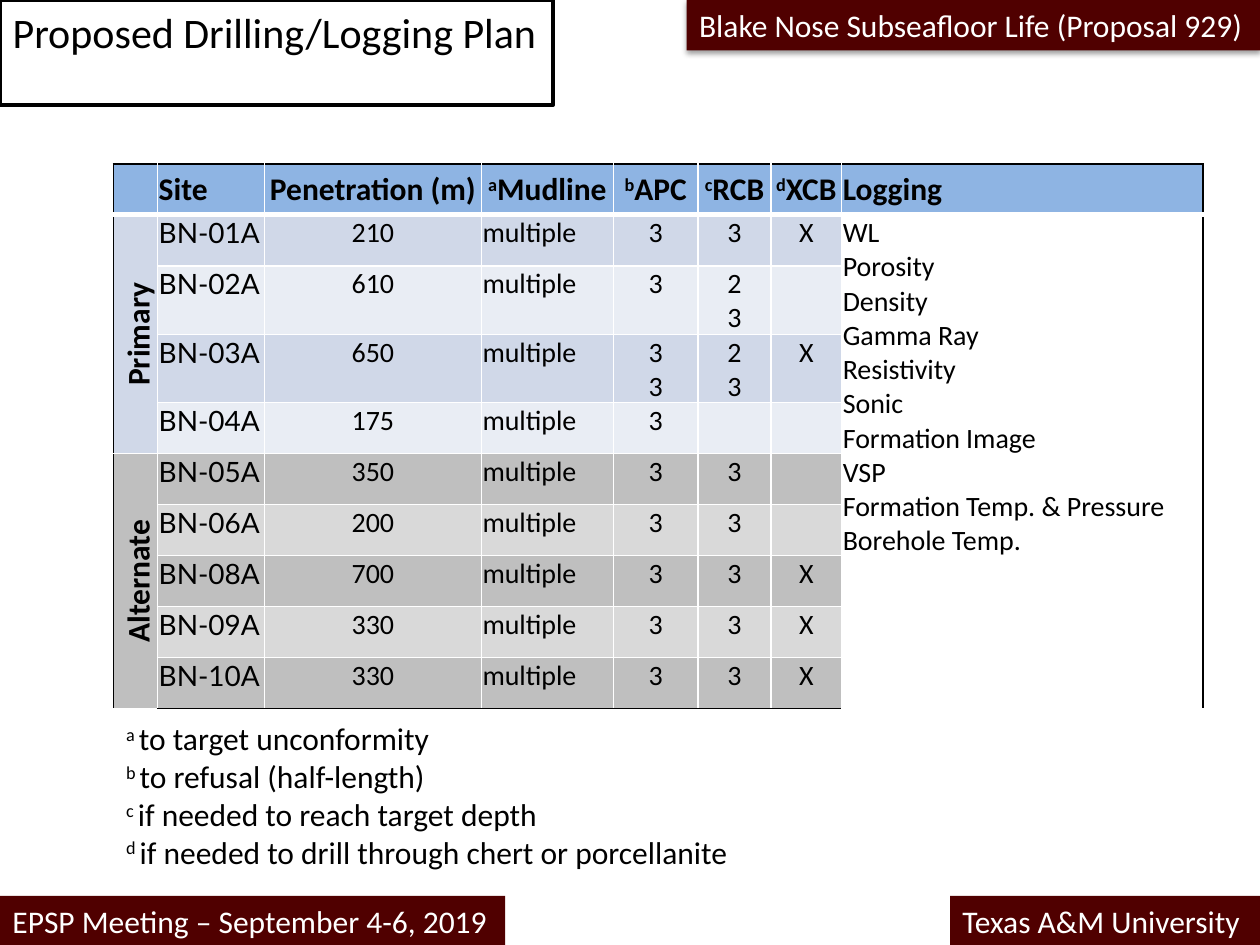
import copy

import lxml.etree
import pptx
import pptx.dml.color
import pptx.enum.shapes
import pptx.enum.text
import pptx.oxml.ns
import pptx.util

Align = pptx.enum.text.PP_ALIGN
Anchor = pptx.enum.text.MSO_ANCHOR
qn = pptx.oxml.ns.qn

COLORS = {
    "black": "000000",
    "white": "FFFFFF",
    "maroon": "500000",
    "header": "8EB4E3",
    "primary_dark": "D0D8E8",
    "primary_light": "E9EDF4",
    "alternate_dark": "BFBFBF",
    "alternate_light": "D9D9D9",
}
HEADERS = ["", "Site", "Penetration (m)", "a|Mudline", "b|APC", "c|RCB", "d|XCB", "Logging"]
CENTERED = {2, 4, 5, 6}
COLUMN_WIDTHS = [3.5, 8.5, 17.2, 10.5, 6.7, 5.8, 5.6, 28.7]
SITES = [
    ("BN-01A", "210", "3", "3", "X"),
    ("BN-02A", "610", "3", "2\v3", ""),
    ("BN-03A", "650", "3\v3", "2\v3", "X"),
    ("BN-04A", "175", "3", "", ""),
    ("BN-05A", "350", "3", "3", ""),
    ("BN-06A", "200", "3", "3", ""),
    ("BN-08A", "700", "3", "3", "X"),
    ("BN-09A", "330", "3", "3", "X"),
    ("BN-10A", "330", "3", "3", "X"),
]
PRIMARY_COUNT = 4
LOGGING = (
    "WL\nPorosity\nDensity\nGamma Ray\nResistivity\nSonic\nFormation Image\n"
    "VSP\nFormation Temp. & Pressure\nBorehole Temp."
)
LEGEND = (
    "a |to target unconformity\nb |to refusal (half-length)\n"
    "c |if needed to reach target depth\n"
    "d |if needed to drill through chert or porcellanite"
)


def rgb(name):
    return pptx.dml.color.RGBColor.from_string(COLORS[name])


def write(tf, text, size=18, color="black", font="Calibri", bold=False, align=Align.LEFT):
    for i, line in enumerate(text.split("\n")):
        p = tf.paragraphs[0] if i == 0 else tf.add_paragraph()
        sup, bar, base = line.rpartition("|")
        p.text = sup or base
        if bar:
            p.runs[0]._r.get_or_add_rPr().set("baseline", "30000")
            p.add_run().text = base
        p.alignment = align
        for r in p.runs:
            r.font.size = pptx.util.Pt(size)
            r.font.name = font
            r.font.bold = bold
            r.font.color.rgb = rgb(color)
        for br in p._p.findall(qn("a:br")):
            br.append(copy.deepcopy(p.runs[0]._r.rPr))


class Deck:
    COLS, ROWS = 100, 75

    def __init__(self, prs):
        self.prs = prs
        self.slide = prs.slides.add_slide(prs.slide_layouts[1])

    def x(self, cols):
        return int(self.prs.slide_width * cols / self.COLS)

    def y(self, rows):
        return int(self.prs.slide_height * rows / self.ROWS)

    def place(self, sp, left, top, width, height):
        sp.left, sp.top = self.x(left), self.y(top)
        sp.width, sp.height = self.x(width), self.y(height)
        tf = sp.text_frame
        tf.word_wrap = False
        tf.auto_size = pptx.enum.text.MSO_AUTO_SIZE.SHAPE_TO_FIT_TEXT
        tf.vertical_anchor = Anchor.TOP
        return tf

    def title(self, text, *box):
        sp = self.slide.shapes.title
        write(self.place(sp, *box), text, size=24)
        sp.line.color.rgb = rgb("black")
        sp.line.width = pptx.util.Pt(2)

    def legend(self, text, *box):
        tf = self.place(self.slide.placeholders[1], *box)
        write(tf, text)
        for p in tf.paragraphs:
            pPr = p._p.get_or_add_pPr()
            pPr.set("marL", "0")
            pPr.set("indent", "0")
            lxml.etree.SubElement(pPr, qn("a:buNone"))
            p.space_before = pptx.util.Pt(0)

    def banner(self, text, *box, shadow=False):
        sp = self.slide.shapes.add_shape(pptx.enum.shapes.MSO_SHAPE.RECTANGLE, 0, 0, 0, 0)
        write(self.place(sp, *box), text, color="white")
        sp.fill.solid()
        sp.fill.fore_color.rgb = rgb("maroon")
        sp.line.fill.background()
        sp.shadow.inherit = False
        if shadow:
            effects = sp._element.spPr.find(qn("a:effectLst"))
            outer = lxml.etree.SubElement(
                effects, qn("a:outerShdw"), blurRad=str(pptx.util.Pt(3.1)),
                dist=str(pptx.util.Pt(1.6)), dir="5400000", rotWithShape="0")
            clr = lxml.etree.SubElement(outer, qn("a:srgbClr"), val=COLORS["black"])
            lxml.etree.SubElement(clr, qn("a:alpha"), val="38000")

    def table(self, widths, row_count, left, top, height):
        frame = self.slide.shapes.add_table(
            row_count, len(widths), self.x(left), self.y(top),
            self.x(sum(widths)), self.y(height))
        tbl = frame.table
        tbl.first_row = tbl.horz_banding = False
        for col, width in zip(tbl.columns, widths):
            col.width = self.x(width)
        last_row, last_col = row_count - 1, len(widths) - 1
        for r in range(row_count):
            for c in range(len(widths)):
                cell = tbl.cell(r, c)
                self.border(cell, "L", c == 0)
                self.border(cell, "R", c == last_col)
                self.border(cell, "T", r == 0, 3 if r == 1 else 1)
                self.border(cell, "B", r == last_row, 3 if r == 0 else 1)
                cell.fill.background()
        return tbl

    def border(self, cell, side, outer, width=1):
        ln = lxml.etree.SubElement(
            cell._tc.get_or_add_tcPr(), qn("a:ln" + side), w=str(pptx.util.Pt(width)))
        fill = lxml.etree.SubElement(ln, qn("a:solidFill"))
        lxml.etree.SubElement(
            fill, qn("a:srgbClr"), val=COLORS["black" if outer else "white"])

    def cell(self, cell, text, fill=None, anchor=Anchor.TOP, **fmt):
        cell.margin_left = cell.margin_right = cell.margin_top = pptx.util.Inches(0.01)
        cell.margin_bottom = 0
        cell.vertical_anchor = anchor
        if fill:
            cell.fill.solid()
            cell.fill.fore_color.rgb = rgb(fill)
        write(cell.text_frame, text, **fmt)

    def group_cell(self, tbl, first, last, text, fill):
        cell = tbl.cell(first, 0)
        cell.merge(tbl.cell(last, 0))
        self.cell(cell, text, fill, Anchor.MIDDLE, bold=True, align=Align.CENTER)
        cell.margin_left = cell.margin_right = pptx.util.Inches(0.1)
        cell.margin_top = cell.margin_bottom = pptx.util.Inches(0.05)
        cell._tc.get_or_add_tcPr().set("vert", "vert270")


def drilling_table(deck):
    tbl = deck.table(COLUMN_WIDTHS, len(SITES) + 1, 9, 13, 40.5)
    aligns = [Align.CENTER if c in CENTERED else Align.LEFT for c in range(len(HEADERS))]
    for c, text in enumerate(HEADERS):
        align = Align.CENTER if "|" in text else aligns[c]
        deck.cell(tbl.cell(0, c), text, "header", Anchor.MIDDLE, bold=True, align=align)
    for i, (site, depth, *cores) in enumerate(SITES):
        group = "primary" if i < PRIMARY_COUNT else "alternate"
        fill = group + ("_light" if i % 2 else "_dark")
        for c, text in enumerate([site, depth, "multiple", *cores], 1):
            font = "Lato" if c == 1 else "Calibri"
            deck.cell(tbl.cell(i + 1, c), text, fill, size=16, font=font, align=aligns[c])
    deck.group_cell(tbl, 1, PRIMARY_COUNT, "Primary", "primary_dark")
    deck.group_cell(tbl, PRIMARY_COUNT + 1, len(SITES), "Alternate", "alternate_dark")
    logging = tbl.cell(1, len(HEADERS) - 1)
    logging.merge(tbl.cell(len(SITES), len(HEADERS) - 1))
    deck.cell(logging, LOGGING, size=16)


def main():
    prs = pptx.Presentation()
    prs.slide_width = pptx.util.Inches(10)
    prs.slide_height = pptx.util.Inches(7.5)
    deck = Deck(prs)
    deck.banner("EPSP Meeting – September 4-6, 2019", 0, 71.1, 40.1, 4)
    deck.banner("Texas A&M University", 75.4, 71.1, 24.6, 4)
    drilling_table(deck)
    deck.legend(LEGEND, 9, 56.6, 50.2, 13.1)
    deck.title("Proposed Drilling/Logging Plan", 0, 0, 43.9, 5)
    deck.banner("Blake Nose Subseafloor Life (Proposal 929)", 54.5, 0, 45.5, 4, shadow=True)
    prs.save("out.pptx")


if __name__ == "__main__":
    main()
